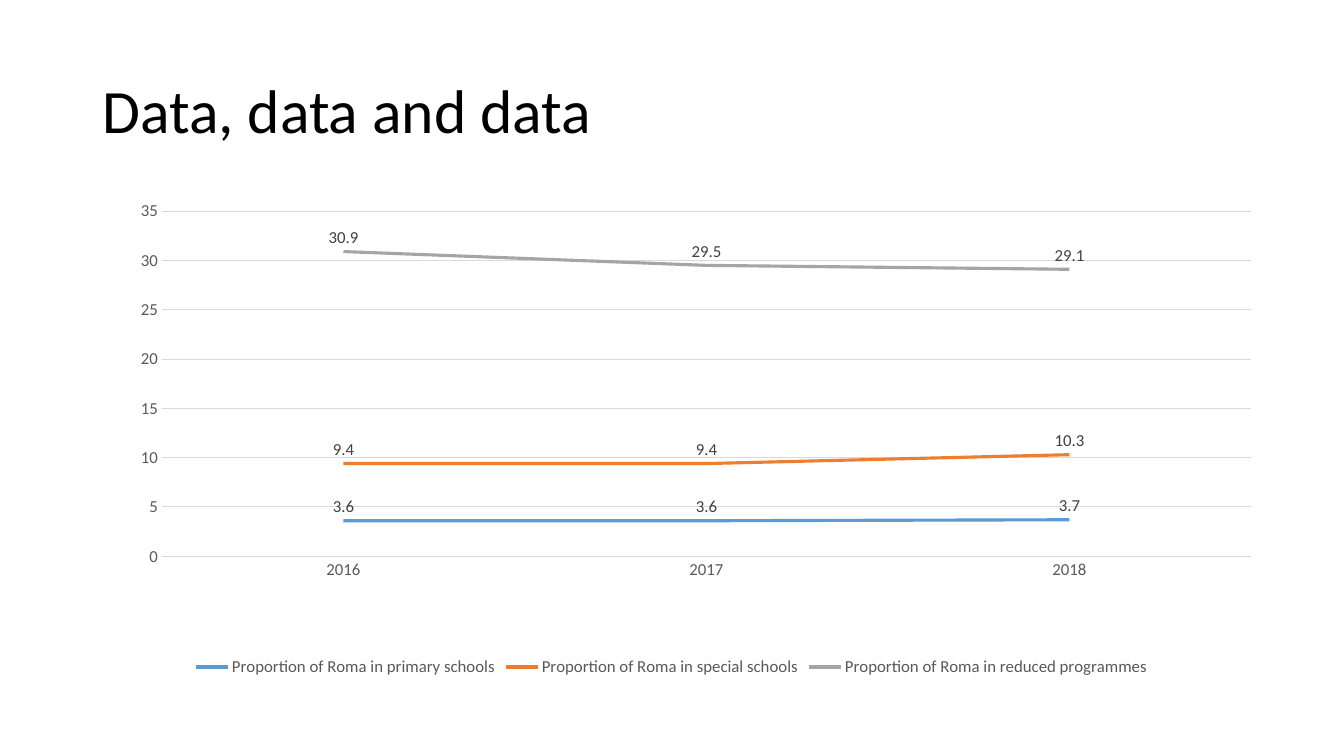
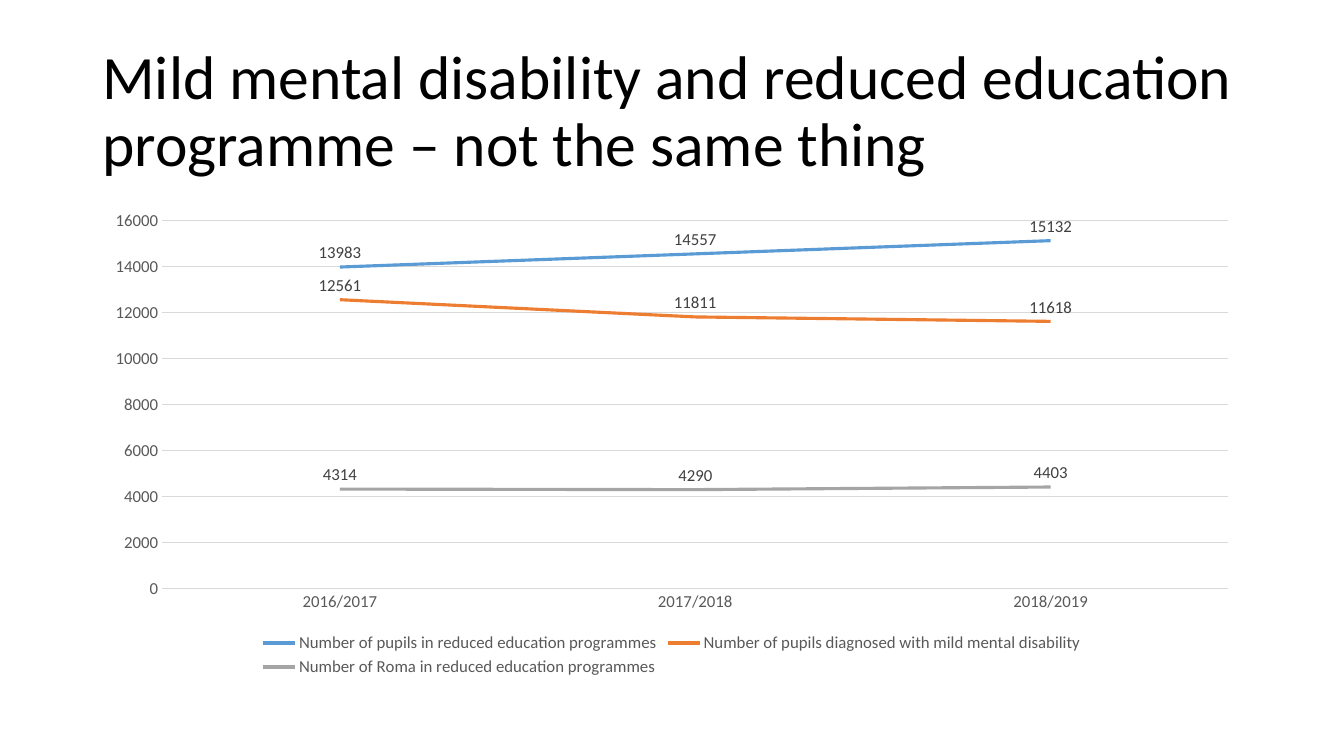
from dataclasses import dataclass
from typing import Optional

import pptx
import pptx.chart.data
import pptx.dml.color
import pptx.enum.chart
import pptx.enum.text
import pptx.oxml
import pptx.oxml.ns
import pptx.util
from pptx.util import Cm

FONT = "Calibri"
COLOURS = {
    "title": "000000",
    "axis_text": "595959",
    "label_text": "404040",
    "grid": "D9D9D9",
}
SERIES_COLOURS = {"first": "5B9BD5", "second": "ED7D31", "third": "A5A5A5"}

LEFT, WIDTH = Cm(2.33), Cm(29.21)
TITLE_TOP, TITLE_HEIGHT = Cm(1.01), Cm(3.68)
CHART_TOP, CHART_HEIGHT = Cm(5.07), Cm(12.09)


@dataclass(frozen=True)
class Trend:
    name: str
    values: tuple[float, ...]


@dataclass(frozen=True)
class PlotArea:
    """Inner plot area as fractions of the chart."""
    x: float
    y: float
    w: float
    h: float


@dataclass(frozen=True)
class ChartPage:
    title: str
    categories: tuple[str, ...]
    trends: tuple[Trend, ...]
    plot_area: Optional[PlotArea] = None


PAGES = (
    ChartPage(
        "Data, data and data",
        ("2016", "2017", "2018"),
        (
            Trend("Proportion of Roma in primary schools", (3.6, 3.6, 3.7)),
            Trend("Proportion of Roma in special schools", (9.4, 9.4, 10.3)),
            Trend("Proportion of Roma in reduced programmes", (30.9, 29.5, 29.1)),
        ),
        PlotArea(0.06, 0.02, 0.94, 0.72),
    ),
    ChartPage(
        "Mild mental disability and reduced education programme – not the same thing",
        ("2016/2017", "2017/2018", "2018/2019"),
        (
            Trend("Number of pupils in reduced education programmes", (13983, 14557, 15132)),
            Trend("Number of pupils diagnosed with mild mental disability", (12561, 11811, 11618)),
            Trend("Number of Roma in reduced education programmes", (4314, 4290, 4403)),
        ),
    ),
)


def rgb(colour: str) -> pptx.dml.color.RGBColor:
    return pptx.dml.color.RGBColor.from_string(colour)


def style_font(font, size: float, colour: str) -> None:
    font.name = FONT
    font.size = pptx.util.Pt(size)
    font.color.rgb = rgb(colour)


def style_line(line, width: float, colour: str) -> None:
    line.width = pptx.util.Pt(width)
    line.color.rgb = rgb(colour)


def add_title(page, text: str) -> None:
    box = page.shapes.add_textbox(LEFT, TITLE_TOP, WIDTH, TITLE_HEIGHT)
    frame = box.text_frame
    frame.word_wrap = True
    frame.vertical_anchor = pptx.enum.text.MSO_ANCHOR.MIDDLE
    para = frame.paragraphs[0]
    para.line_spacing = 0.9
    span = para.add_run()
    span.text = text
    style_font(span.font, 44, COLOURS["title"])


def place_plot_area(chart, area: PlotArea) -> None:
    """Fix the inner plot area, which python-pptx cannot set itself."""
    plot_area = chart.element.xpath("c:chart/c:plotArea")[0]
    for layout in plot_area.xpath("c:layout"):
        plot_area.remove(layout)
    plot_area.insert(0, pptx.oxml.parse_xml(
        f'<c:layout {pptx.oxml.ns.nsdecls("c")}><c:manualLayout>'
        '<c:layoutTarget val="inner"/><c:xMode val="edge"/><c:yMode val="edge"/>'
        f'<c:x val="{area.x}"/><c:y val="{area.y}"/>'
        f'<c:w val="{area.w}"/><c:h val="{area.h}"/>'
        "</c:manualLayout></c:layout>"
    ))


def style_axes(chart) -> None:
    for axis in (chart.category_axis, chart.value_axis):
        axis.major_tick_mark = pptx.enum.chart.XL_TICK_MARK.NONE
        axis.minor_tick_mark = pptx.enum.chart.XL_TICK_MARK.NONE
        style_font(axis.tick_labels.font, 12, COLOURS["axis_text"])
    style_line(chart.category_axis.format.line, 0.75, COLOURS["grid"])
    chart.value_axis.format.line.fill.background()
    chart.value_axis.has_major_gridlines = True
    style_line(chart.value_axis.major_gridlines.format.line, 0.75, COLOURS["grid"])


def style_series(series, colour: str) -> None:
    series.smooth = False
    series.marker.style = pptx.enum.chart.XL_MARKER_STYLE.NONE
    style_line(series.format.line, 2.25, colour)
    labels = series.data_labels
    labels.show_value = True
    labels.position = pptx.enum.chart.XL_LABEL_POSITION.ABOVE
    style_font(labels.font, 12, COLOURS["label_text"])


def add_line_chart(page, content: ChartPage) -> None:
    data = pptx.chart.data.CategoryChartData()
    data.categories = content.categories
    for trend in content.trends:
        data.add_series(trend.name, trend.values)
    chart = page.shapes.add_chart(
        pptx.enum.chart.XL_CHART_TYPE.LINE, LEFT, CHART_TOP, WIDTH, CHART_HEIGHT, data
    ).chart
    style_font(chart.font, 10, COLOURS["title"])
    chart.has_title = False
    chart.has_legend = True
    chart.legend.position = pptx.enum.chart.XL_LEGEND_POSITION.BOTTOM
    chart.legend.include_in_layout = False
    style_font(chart.legend.font, 12, COLOURS["axis_text"])
    style_axes(chart)
    plot = chart.plots[0]
    plot.vary_by_categories = False
    for series, colour in zip(plot.series, SERIES_COLOURS.values()):
        style_series(series, colour)
    if content.plot_area:
        place_plot_area(chart, content.plot_area)


def main() -> None:
    deck = pptx.Presentation()
    deck.slide_width, deck.slide_height = Cm(33.87), Cm(19.05)
    blank = deck.slide_layouts[6]
    for content in PAGES:
        page = deck.slides.add_slide(blank)
        add_title(page, content.title)
        add_line_chart(page, content)
    deck.save("out.pptx")


if __name__ == "__main__":
    main()
